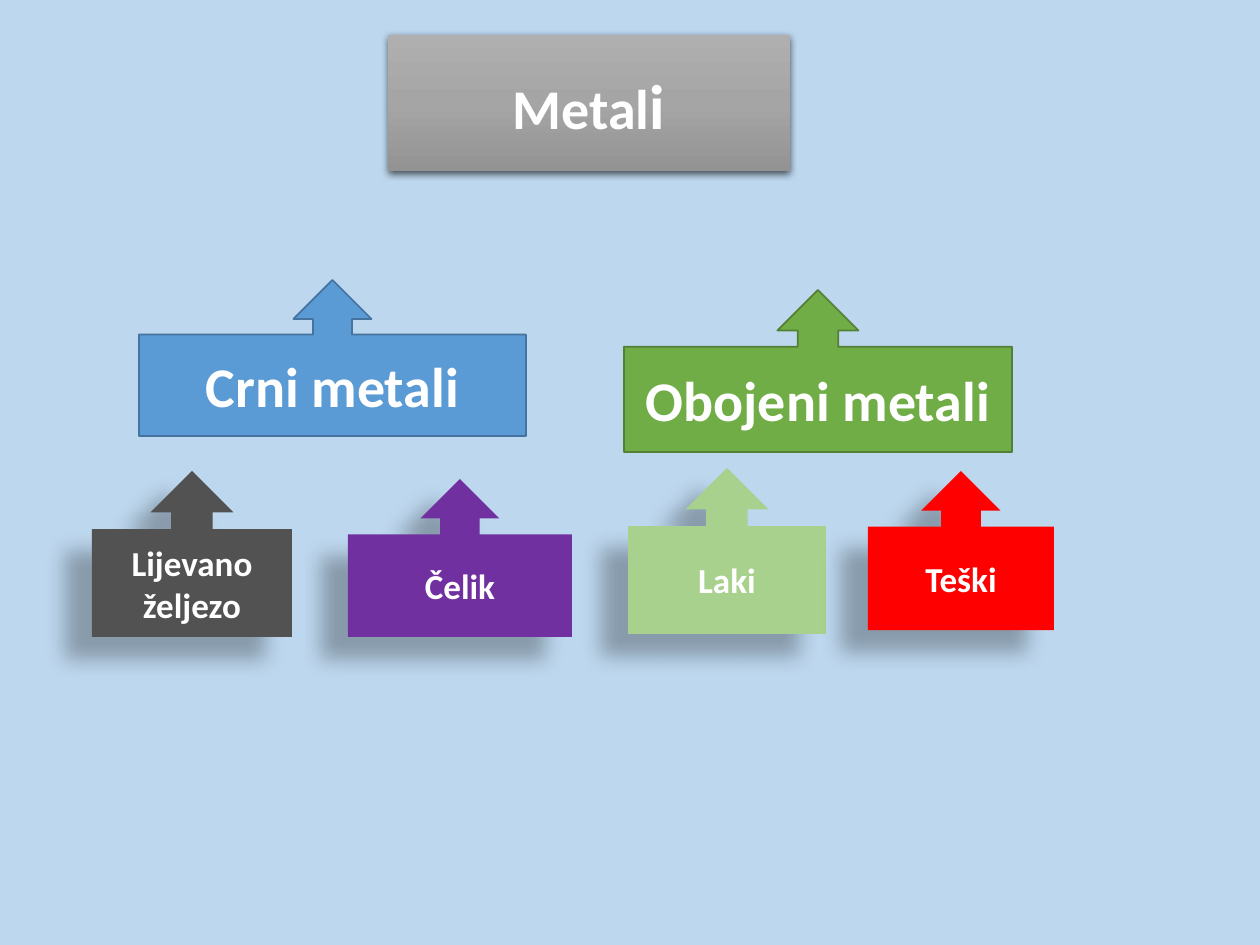
from copy import deepcopy
from dataclasses import dataclass
from typing import Optional

from lxml.etree import SubElement
from pptx import Presentation
from pptx.dml.color import RGBColor
from pptx.enum.shapes import MSO_SHAPE as Kind
from pptx.enum.text import MSO_ANCHOR as Anchor, PP_ALIGN as Align
from pptx.oxml.ns import qn
from pptx.util import Emu, Pt

SCALE = 914400 / 126
WHITE = RGBColor(0xFF, 0xFF, 0xFF)
SKY = RGBColor(0xBD, 0xD7, 0xEE)
BLUE = RGBColor(0x5B, 0x9B, 0xD5)
NAVY = RGBColor(0x43, 0x73, 0x9E)
GREEN = RGBColor(0x70, 0xAD, 0x47)
MOSS = RGBColor(0x53, 0x80, 0x35)
GREY = RGBColor(0x52, 0x52, 0x52)
PURPLE = RGBColor(0x70, 0x30, 0xA0)
LIME = RGBColor(0xA9, 0xD1, 0x8E)
RED = RGBColor(0xFF, 0x00, 0x00)
STEEL = (RGBColor(0xAF, 0xAF, 0xAF), RGBColor(0xA5, 0xA5, 0xA5),
         RGBColor(0x93, 0x93, 0x93))


@dataclass
class Shade:
    alpha: int
    blur: float
    dist: float
    angle: int


@dataclass
class Box:
    text: str
    left: int
    top: int
    width: int
    height: int
    fill: RGBColor
    size: int = 20
    line: Optional[RGBColor] = None


SOFT = Shade(63, 4.5, 1.5, 90)
DEEP = Shade(28, 11.8, 19.7, 141)

GROUPS = [
    Box("Crni metali", 139, 280, 387, 156, BLUE, 32, NAVY),
    Box("Obojeni metali", 624, 290, 388, 162, GREEN, 32, MOSS),
]
TYPES = [
    Box("Lijevano željezo", 92, 471, 200, 166, GREY),
    Box("Čelik", 348, 479, 224, 158, PURPLE),
    Box("Laki", 628, 468, 198, 166, LIME),
    Box("Teški", 868, 471, 186, 159, RED),
]


def px(n: int) -> Emu:
    return Emu(round(n * SCALE))


def add_shade(shape, shade: Shade) -> None:
    effects = shape._element.spPr.find(qn("a:effectLst"))
    outer = SubElement(effects, qn("a:outerShdw"), {
        "blurRad": str(Pt(shade.blur)), "dist": str(Pt(shade.dist)),
        "dir": str(shade.angle * 60000), "algn": "ctr", "rotWithShape": "0"})
    color = SubElement(outer, qn("a:srgbClr"), val="000000")
    SubElement(color, qn("a:alpha"), val=str(shade.alpha * 1000))


def add_box(slide, kind: Kind, box: Box, shade: Optional[Shade] = None):
    shape = slide.shapes.add_shape(
        kind, px(box.left), px(box.top), px(box.width), px(box.height))
    shape.fill.solid()
    shape.fill.fore_color.rgb = box.fill
    if box.line is None:
        shape.line.fill.background()
    else:
        shape.line.color.rgb = box.line
        shape.line.width = Pt(1)
    shape.shadow.inherit = False
    if shade:
        add_shade(shape, shade)
    frame = shape.text_frame
    frame.word_wrap = True
    frame.vertical_anchor = Anchor.MIDDLE
    para = frame.paragraphs[0]
    para.text = box.text
    para.alignment = Align.CENTER
    font = para.font
    font.name, font.size, font.bold = "Calibri", Pt(box.size), True
    font.color.rgb = WHITE
    return shape


def add_steel(shape) -> None:
    fill = shape.fill
    fill.gradient()
    fill.gradient_angle = 270
    last = shape._element.spPr.findall(".//" + qn("a:gs"))[-1]
    last.addprevious(deepcopy(last))
    for i, (stop, color) in enumerate(zip(fill.gradient_stops, STEEL)):
        stop.position = i / 2
        stop.color.rgb = color


def main() -> None:
    deck = Presentation()
    deck.slide_width, deck.slide_height = px(1260), px(945)
    slide = deck.slides.add_slide(deck.slide_layouts[6])
    slide.background.fill.solid()
    slide.background.fill.fore_color.rgb = SKY

    # Title, with a taller last letter
    title = add_box(slide, Kind.RECTANGLE,
                    Box("Metal", 388, 35, 402, 136, STEEL[1], 32), SOFT)
    add_steel(title)
    frame = title.text_frame
    frame.vertical_anchor = Anchor.TOP
    frame.margin_top = px(32)
    tail = frame.paragraphs[0].add_run()
    tail.text = "i"
    tail.font.size = Pt(36)

    # Two groups of metals
    for box in GROUPS:
        add_box(slide, Kind.UP_ARROW_CALLOUT, box)

    # Types within the groups
    for box in TYPES:
        add_box(slide, Kind.UP_ARROW_CALLOUT, box, DEEP)

    deck.save("out.pptx")


if __name__ == "__main__":
    main()
